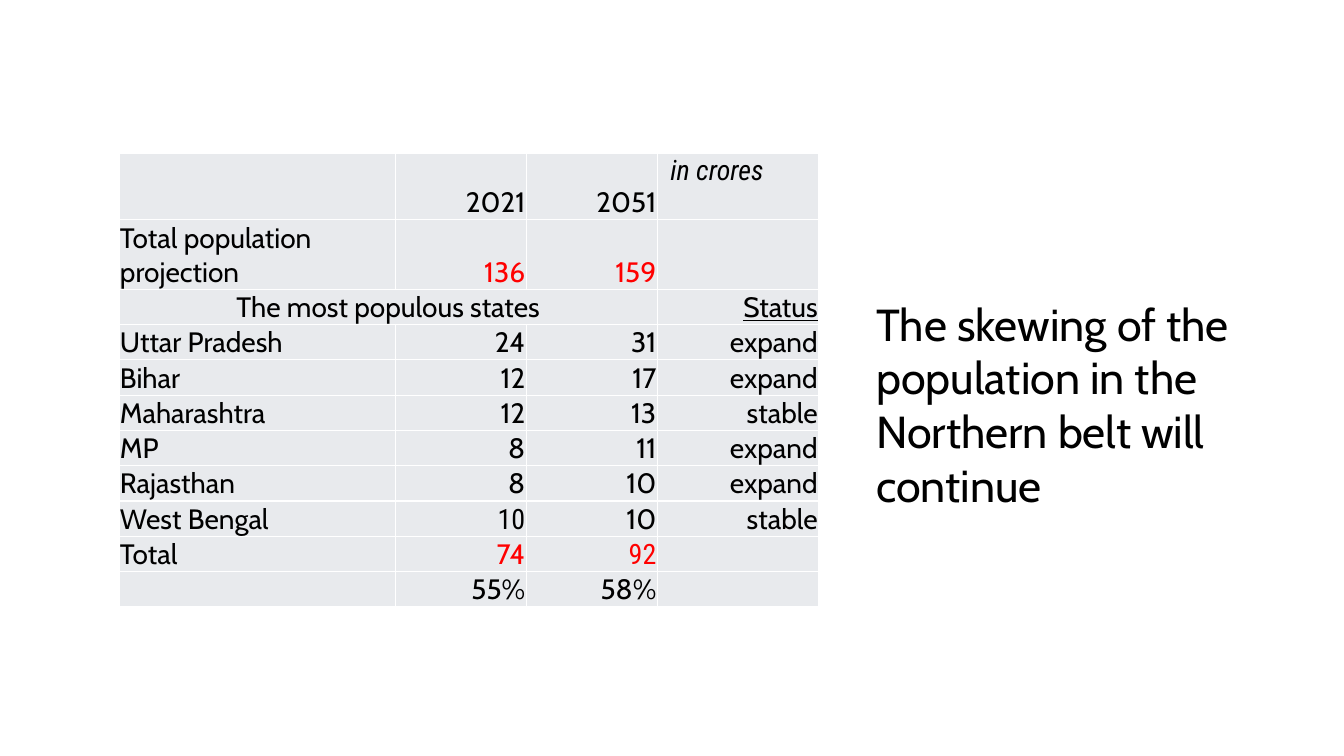
import pptx
import pptx.util
import pptx.dml.color
import pptx.enum.text
import pptx.oxml
import pptx.oxml.ns
from pptx.util import Inches

RGBColor = pptx.dml.color.RGBColor
ALIGN = pptx.enum.text.PP_ALIGN
ANCHOR = pptx.enum.text.MSO_ANCHOR

BLACK = RGBColor(0, 0, 0)
RED = RGBColor(0xFF, 0, 0)
GREY = RGBColor(0xE8, 0xEA, 0xED)
WHITE = RGBColor(0xFF, 0xFF, 0xFF)
MAIN = "Cabin"
NARROW = "Roboto Condensed"

WIDTHS = [2.74, 1.3, 1.3, 1.6]
HEIGHTS = [0.66, 0.69] + [0.35] * 9
ROWS = [
    ["", "2021", "2051", "in crores"],
    ["Total population projection", "136", "159", ""],
    ["The most populous states", "", "", "Status"],
    ["Uttar Pradesh", "24", "31", "expand"],
    ["Bihar", "12", "17", "expand"],
    ["Maharashtra", "12", "13", "stable"],
    ["MP", "8", "11", "expand"],
    ["Rajasthan", "8", "10", "expand"],
    ["West Bengal", "10", "10", "stable"],
    ["Total", "74", "92", ""],
    ["", "55%", "58%", ""],
]
TOTALS = (1, 9)
CONDENSED = [(0, 3), (8, 1), (9, 2)]


def style(par, size, color=BLACK, name=MAIN):
    par.font.size = pptx.util.Pt(size)
    par.font.name = name
    par.font.color.rgb = color


def border(cell):
    props = cell._tc.get_or_add_tcPr()
    space = pptx.oxml.ns.nsdecls("a")
    for place, side in enumerate("LRTB"):
        line = pptx.oxml.parse_xml(
            f'<a:ln{side} {space} w="12700"><a:solidFill>'
            f'<a:srgbClr val="{WHITE}"/></a:solidFill></a:ln{side}>')
        props.insert(place, line)


def fill_cell(cell, text, row, col):
    cell.fill.solid()
    cell.fill.fore_color.rgb = GREY
    border(cell)
    cell.margin_left = cell.margin_right = cell.margin_top = Inches(0.01)
    cell.margin_bottom = 0
    cell.vertical_anchor = ANCHOR.BOTTOM
    cell.text = text
    par = cell.text_frame.paragraphs[0]
    par.alignment = ALIGN.RIGHT if col else ALIGN.LEFT
    color = RED if row in TOTALS and col else BLACK
    style(par, 20, color, NARROW if (row, col) in CONDENSED else MAIN)


def add_states(slide):
    frame = slide.shapes.add_table(
        len(ROWS), len(WIDTHS), Inches(1.18), Inches(1.52),
        Inches(sum(WIDTHS)), Inches(sum(HEIGHTS)))
    table = frame.table
    for col, width in zip(table.columns, WIDTHS):
        col.width = Inches(width)
    for row, height in zip(table.rows, HEIGHTS):
        row.height = Inches(height)
    for row, texts in enumerate(ROWS):
        for col, text in enumerate(texts):
            fill_cell(table.cell(row, col), text, row, col)

    # Unit note in the top corner
    unit = table.cell(0, 3)
    unit.vertical_anchor = ANCHOR.TOP
    unit.margin_left = Inches(0.13)
    note = unit.text_frame.paragraphs[0]
    note.alignment = ALIGN.LEFT
    note.font.italic = True

    # Heading row above the states
    head = table.cell(2, 0)
    head.merge(table.cell(2, 2))
    head.text_frame.paragraphs[0].alignment = ALIGN.CENTER
    table.cell(2, 3).text_frame.paragraphs[0].font.underline = True


def add_title(slide, text):
    title = slide.shapes.title
    title.left, title.top = Inches(8.59), Inches(2.89)
    title.width, title.height = Inches(3.91), Inches(2.26)
    frame = title.text_frame
    frame.text = text
    frame.word_wrap = True
    frame.auto_size = pptx.enum.text.MSO_AUTO_SIZE.NONE
    frame.vertical_anchor = ANCHOR.TOP
    par = frame.paragraphs[0]
    par.alignment = ALIGN.LEFT
    style(par, 32)


def main():
    deck = pptx.Presentation()
    deck.slide_width, deck.slide_height = Inches(13.33), Inches(7.5)
    slide = deck.slides.add_slide(deck.slide_layouts[5])
    add_states(slide)
    add_title(slide, "The skewing of the population in the "
                     "Northern belt will continue")
    deck.save("out.pptx")


if __name__ == "__main__":
    main()
